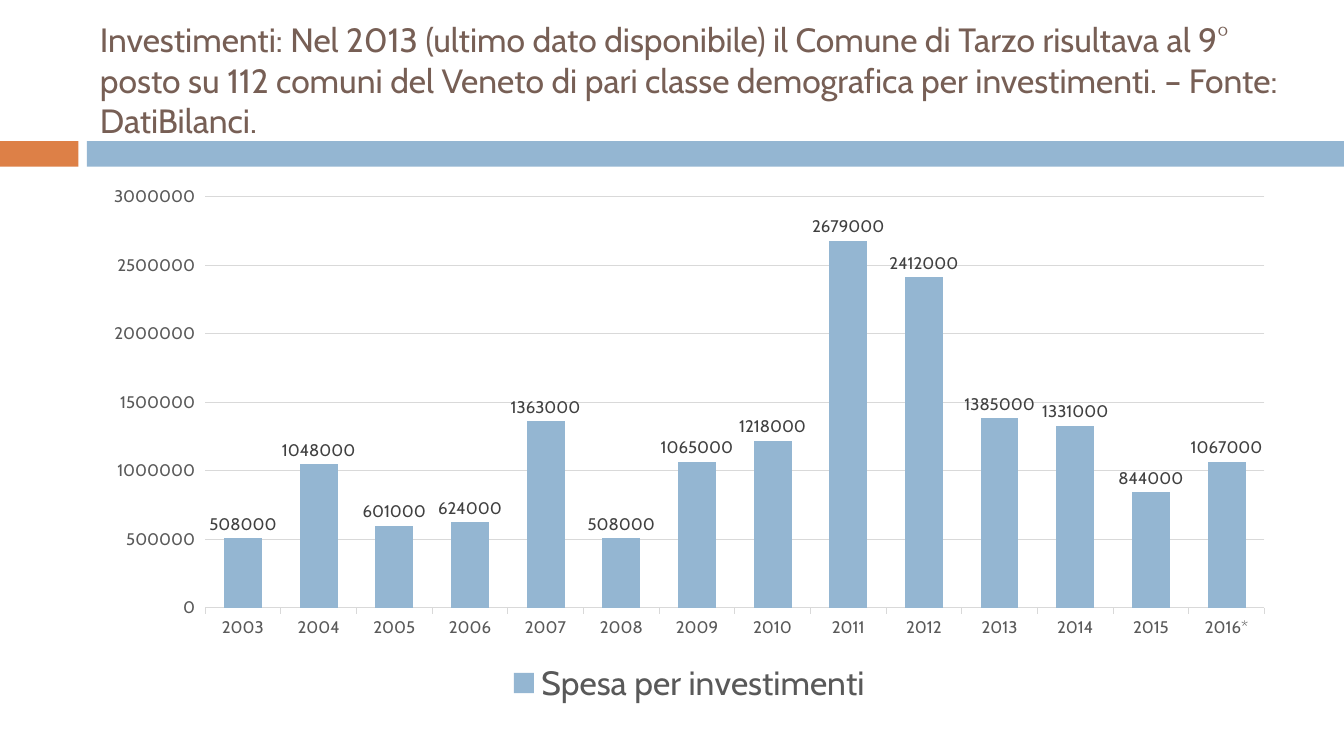
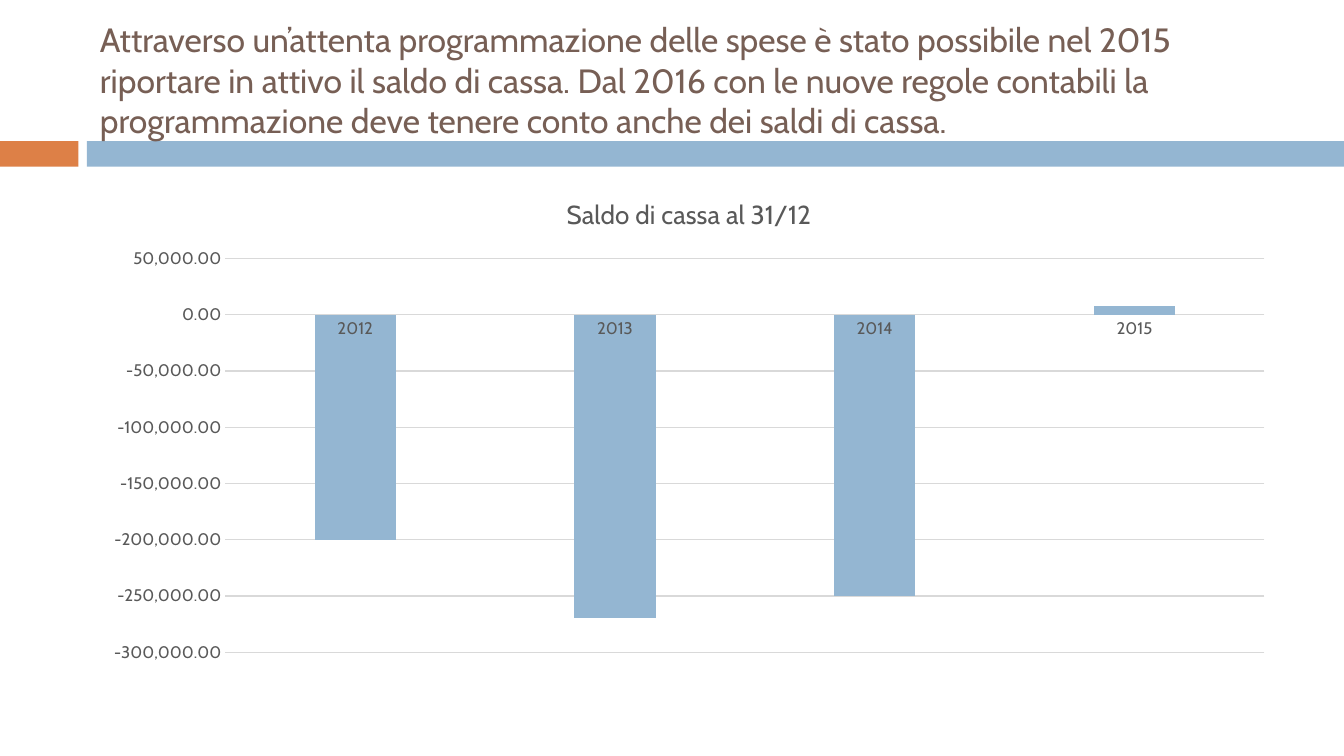
from dataclasses import dataclass

from pptx import Presentation
from pptx import util as u
from pptx.chart.data import CategoryChartData
from pptx.dml.color import RGBColor
from pptx.enum import chart as charts, shapes, text


@dataclass(frozen=True)
class Theme:
    face: str = "Cabin"
    title: str = "775F55"
    accent: str = "DD8047"
    main: str = "94B6D2"
    muted: str = "595959"
    label: str = "404040"
    rule: str = "D9D9D9"
    title_size: float = 24
    legend_size: float = 24
    chart_title_size: float = 18.6
    chart_size: float = 12
    rule_width: float = 0.75


@dataclass(frozen=True)
class Box:
    left: float
    top: float
    width: float
    height: float

    def lengths(self):
        return [u.Cm(n) for n in (self.left, self.top, self.width, self.height)]


@dataclass(frozen=True)
class ColumnChart:
    name: str
    values: dict
    low: int
    high: int
    step: int
    gap: int
    height: float
    overlap: int = 0
    tick: object = charts.XL_TICK_MARK.NONE
    number_format: str = "General"
    titled: bool = False
    labelled: bool = False


THEME = Theme()
PAGE_WIDTH, PAGE_HEIGHT = 33.87, 19.05
MARGIN, CONTENT_WIDTH = 2.27, 30.2
TITLE_BOX = Box(MARGIN, 0.64, CONTENT_WIDTH, 2.74)
BAND_BOX = Box(0, 3.56, PAGE_WIDTH, 0.64)
CHART_TOP = 4.44

SLIDES = [
    (
        "Investimenti: Nel 2013 (ultimo dato disponibile) il Comune di Tarzo "
        "risultava al 9° posto su 112 comuni del Veneto di pari classe "
        "demografica per investimenti. – Fonte: DatiBilanci.",
        ColumnChart(
            name="Spesa per investimenti",
            values={
                "2003": 508000, "2004": 1048000, "2005": 601000,
                "2006": 624000, "2007": 1363000, "2008": 508000,
                "2009": 1065000, "2010": 1218000, "2011": 2679000,
                "2012": 2412000, "2013": 1385000, "2014": 1331000,
                "2015": 844000, "2016*": 1067000,
            },
            low=0, high=3000000, step=500000, gap=100, height=13.46,
            tick=charts.XL_TICK_MARK.OUTSIDE, labelled=True,
        ),
    ),
    (
        "Attraverso un’attenta programmazione delle spese è stato possibile "
        "nel 2015 riportare in attivo il saldo di cassa. Dal 2016 con le nuove "
        "regole contabili la programmazione deve tenere conto anche dei saldi "
        "di cassa.",
        ColumnChart(
            name="Saldo di cassa al 31/12",
            values={"2012": -200000, "2013": -270000, "2014": -250000, "2015": 8000},
            low=-300000, high=50000, step=50000, gap=219, height=12.5,
            overlap=-27, number_format="#,##0.00", titled=True,
        ),
    ),
]


def style_font(font, size, color):
    font.name = THEME.face
    font.size = u.Pt(size)
    font.bold = False
    font.color.rgb = RGBColor.from_string(color)


def paint(fill, color):
    fill.solid()
    fill.fore_color.rgb = RGBColor.from_string(color)


def style_rule(line):
    line.width = u.Pt(THEME.rule_width)
    paint(line.fill, THEME.rule)


def add_band(page, box):
    """Place a short accent block and, after a gap, the long main block."""
    accent_width, gap = 1.98, 0.21
    start = accent_width + gap
    blocks = [
        (0, accent_width, THEME.accent),
        (start, box.width - start, THEME.main),
    ]
    for offset, width, color in blocks:
        part = Box(box.left + offset, box.top, width, box.height)
        block = page.shapes.add_shape(shapes.MSO_SHAPE.RECTANGLE, *part.lengths())
        block.shadow.inherit = False
        block.line.fill.background()
        paint(block.fill, color)


def add_title(page, box, wording):
    frame = page.shapes.add_textbox(*box.lengths()).text_frame
    frame.word_wrap = True
    frame.vertical_anchor = text.MSO_ANCHOR.MIDDLE
    para = frame.paragraphs[0]
    para.text = wording
    style_font(para.font, THEME.title_size, THEME.title)


def style_axes(chart, content):
    for axis in (chart.category_axis, chart.value_axis):
        axis.major_tick_mark = content.tick
        axis.minor_tick_mark = charts.XL_TICK_MARK.NONE
        style_font(axis.tick_labels.font, THEME.chart_size, THEME.muted)
    style_rule(chart.category_axis.format.line)

    scale = chart.value_axis
    scale.minimum_scale = content.low
    scale.maximum_scale = content.high
    scale.major_unit = content.step
    scale.format.line.fill.background()
    scale.has_major_gridlines = True
    style_rule(scale.major_gridlines.format.line)
    scale.tick_labels.number_format = content.number_format
    scale.tick_labels.number_format_is_linked = False


def style_columns(plot, content):
    plot.gap_width = content.gap
    plot.overlap = content.overlap
    plot.vary_by_categories = False
    series = plot.series[0]
    series.invert_if_negative = False
    paint(series.format.fill, THEME.main)
    if content.labelled:
        labels = series.data_labels
        labels.show_value = True
        labels.position = charts.XL_LABEL_POSITION.OUTSIDE_END
        style_font(labels.font, THEME.chart_size, THEME.label)


def add_chart(page, box, content):
    data = CategoryChartData(number_format=content.number_format)
    data.categories = list(content.values)
    data.add_series(content.name, list(content.values.values()))
    chart = page.shapes.add_chart(
        charts.XL_CHART_TYPE.COLUMN_CLUSTERED, *box.lengths(), data
    ).chart
    style_font(chart.font, THEME.chart_size, THEME.muted)
    style_axes(chart, content)
    style_columns(chart.plots[0], content)

    chart.has_title = content.titled
    if content.titled:
        para = chart.chart_title.text_frame.paragraphs[0]
        para.text = content.name
        style_font(para.font, THEME.chart_title_size, THEME.muted)
        chart.chart_title.include_in_layout = False

    chart.has_legend = not content.titled
    if chart.has_legend:
        chart.legend.position = charts.XL_LEGEND_POSITION.BOTTOM
        chart.legend.include_in_layout = False
        style_font(chart.legend.font, THEME.legend_size, THEME.muted)


def add_chart_page(deck, wording, content):
    page = deck.slides.add_slide(deck.slide_layouts[6])
    add_band(page, BAND_BOX)
    add_title(page, TITLE_BOX, wording)
    add_chart(page, Box(MARGIN, CHART_TOP, CONTENT_WIDTH, content.height), content)


def main():
    deck = Presentation()
    deck.slide_width, deck.slide_height = u.Cm(PAGE_WIDTH), u.Cm(PAGE_HEIGHT)
    for wording, content in SLIDES:
        add_chart_page(deck, wording, content)
    deck.save("out.pptx")


if __name__ == "__main__":
    main()
